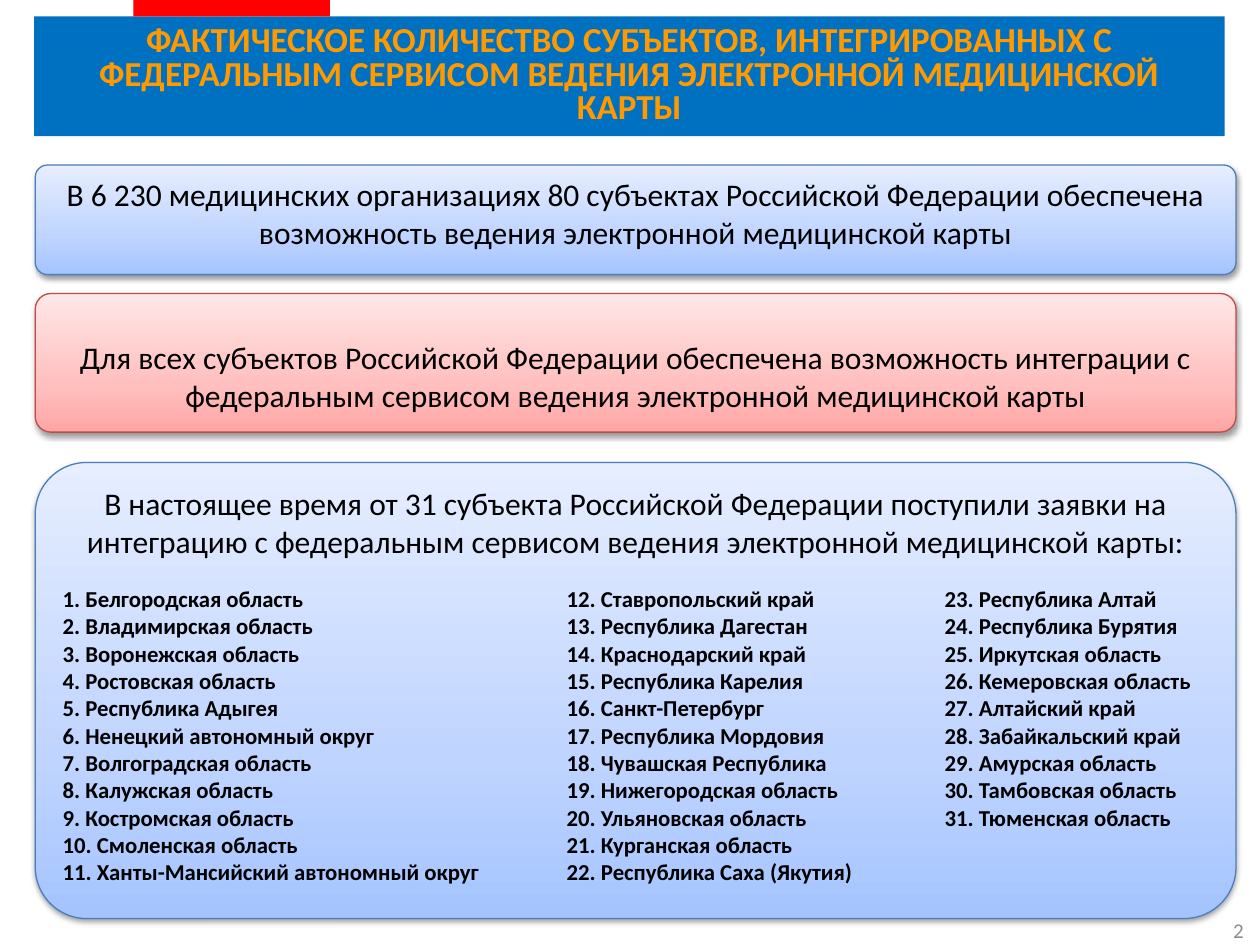
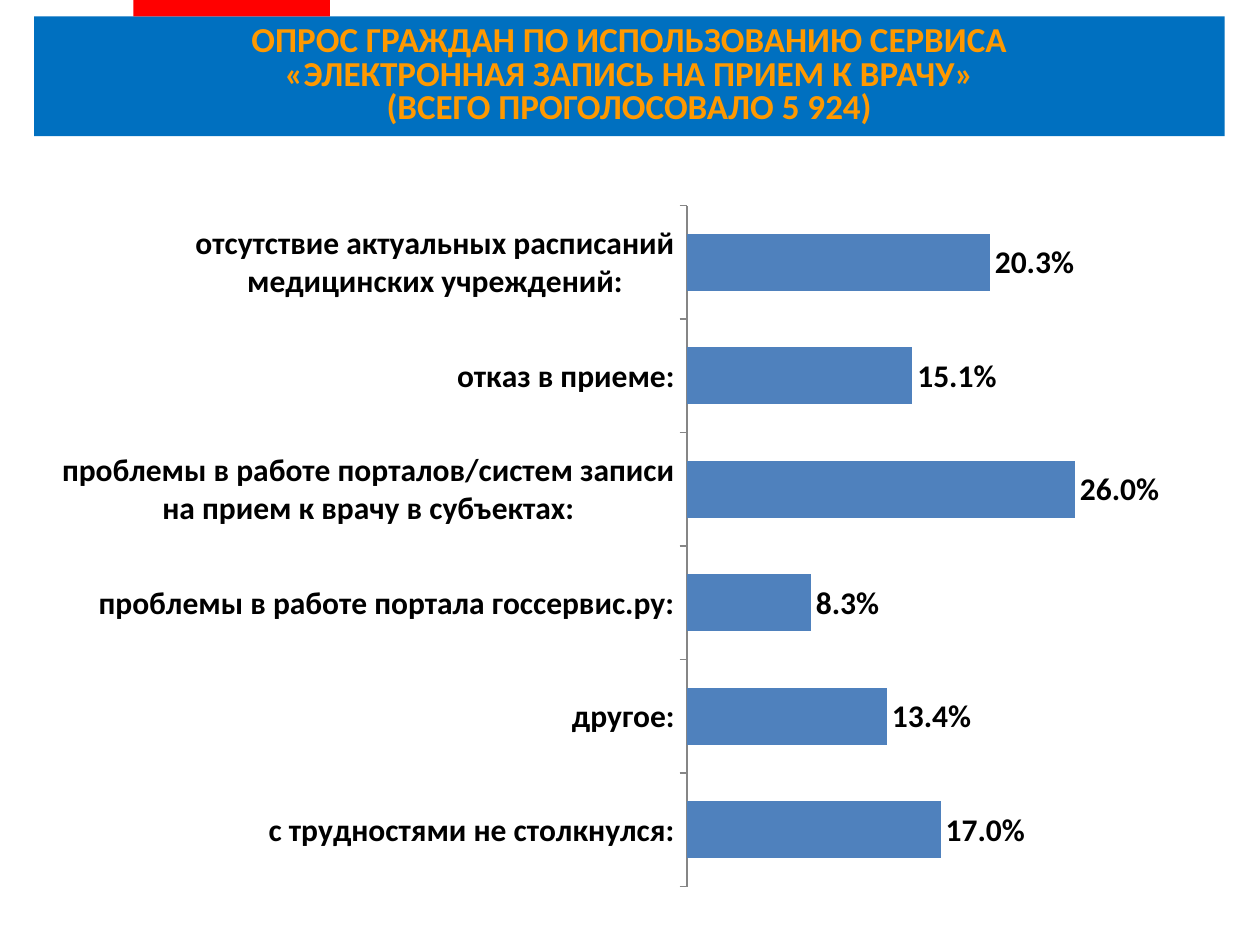
from lxml import etree
from pptx import Presentation
from pptx.chart.data import CategoryChartData
from pptx.dml.color import RGBColor
from pptx.enum.chart import XL_CHART_TYPE, XL_LABEL_POSITION, XL_TICK_MARK
from pptx.enum.shapes import MSO_SHAPE as Shape
from pptx.enum.text import MSO_ANCHOR as Anchor, MSO_AUTO_SIZE as AutoSize, PP_ALIGN as Align
from pptx.oxml import parse_xml
from pptx.oxml.ns import nsdecls, qn
from pptx.util import Inches, Pt

FONT = "Calibri"
BLACK, RED, BAND, ORANGE = "000000", "FF0000", "0070C0", "FF9900"
GREY, BAR, AXIS = "8C8C8C", "4F81BD", "868686"
# Gradient from bottom to top, then the outline
BLUE_PANEL = (("A4C4FF", "BFD4FF", "E6EEFF"), "4B7EBC")
RED_PANEL = (("FFA6A5", "FFC0BF", "FFE7E7"), "BF4C48")
GRADIENT_STOPS = (0, 35, 100)

REGIONS = [
    "Белгородская область", "Владимирская область", "Воронежская область",
    "Ростовская область", "Республика Адыгея", "Ненецкий автономный округ",
    "Волгоградская область", "Калужская область", "Костромская область",
    "Смоленская область", "Ханты-Мансийский автономный округ",
    "Ставропольский край", "Республика Дагестан", "Краснодарский край",
    "Республика Карелия", "Санкт-Петербург", "Республика Мордовия",
    "Чувашская Республика", "Нижегородская область", "Ульяновская область",
    "Курганская область", "Республика Саха (Якутия)", "Республика Алтай",
    "Республика Бурятия", "Иркутская область", "Кемеровская область",
    "Алтайский край", "Забайкальский край", "Амурская область",
    "Тамбовская область", "Тюменская область",
]
REGION_ROWS = 11
COLUMN_TABS = (4, 7)

SURVEY = {
    "отсутствие актуальных расписаний медицинских учреждений:": 0.203,
    "отказ в приеме:": 0.151,
    "проблемы в работе порталов/систем записи на прием к врачу в субъектах:": 0.26,
    "проблемы в работе портала госсервис.ру:": 0.083,
    "другое:": 0.134,
    "с трудностями не столкнулся:": 0.17,
}


def rgb(value):
    return RGBColor.from_string(value)


def inches(box):
    return [Inches(length) for length in box]


def style(font, size, color=BLACK, bold=False):
    font.name, font.size, font.bold = FONT, Pt(size), bold
    font.color.rgb = rgb(color)


def add_header(slide, box, lines):
    """Red tab on the top edge and the title band below it."""
    left, top, width, height = box
    tab = slide.shapes.add_shape(Shape.RECTANGLE, *inches((left + 0.79, 0, 1.56, top)))
    tab.shadow.inherit = False
    tab.fill.solid()
    tab.fill.fore_color.rgb = rgb(RED)
    tab.line.fill.background()

    title = slide.shapes.title
    title.left, title.top, title.width, title.height = inches(box)
    title.fill.solid()
    title.fill.fore_color.rgb = rgb(BAND)
    frame = title.text_frame
    frame.text = "\n".join(lines)
    frame.auto_size, frame.vertical_anchor = AutoSize.NONE, Anchor.MIDDLE
    for line in frame.paragraphs:
        line.alignment, line.line_spacing = Align.CENTER, 0.8
        style(line.font, 20, ORANGE, bold=True)


def add_panel(slide, box, look, message, margin_top=0.05):
    """Rounded gradient panel with a centred message; returns its text frame."""
    colors, outline = look
    panel = slide.shapes.add_shape(Shape.ROUNDED_RECTANGLE, *inches(box))
    panel.adjustments[0] = 0.113
    panel.line.color.rgb, panel.line.width = rgb(outline), Pt(0.75)

    # Three-stop gradient
    panel.fill.gradient()
    panel.fill.gradient_angle = 90
    stops = panel._element.spPr.find(qn("a:gradFill")).find(qn("a:gsLst"))
    for stop in list(stops):
        stops.remove(stop)
    for percent, color in zip(GRADIENT_STOPS, colors):
        stop = etree.SubElement(stops, qn("a:gs"), pos=str(percent * 1000))
        etree.SubElement(stop, qn("a:srgbClr"), val=color)

    # Soft shadow straight below
    panel.shadow.inherit = False
    panel._element.spPr.find(qn("a:effectLst")).append(parse_xml(
        f'<a:outerShdw {nsdecls("a")} blurRad="40000" dist="20000" dir="5400000" '
        f'rotWithShape="0"><a:srgbClr val="{BLACK}"><a:alpha val="38000"/>'
        '</a:srgbClr></a:outerShdw>'))

    frame = panel.text_frame
    frame.word_wrap, frame.vertical_anchor = True, Anchor.TOP
    frame.margin_top = Inches(margin_top)
    frame.text = message
    frame.paragraphs[0].alignment = Align.CENTER
    style(frame.paragraphs[0].font, 18)
    return frame


def add_regions(frame):
    """Numbered regions, filled column by column and aligned by tab stops."""
    numbered = [f"{number}. {region}" for number, region in enumerate(REGIONS, 1)]
    for row in range(REGION_ROWS):
        line = frame.add_paragraph()
        line.text = "\t".join(numbered[row::REGION_ROWS])
        line.alignment = Align.LEFT
        line.space_before = Pt(0 if row else 14.5)
        style(line.font, 13, bold=True)
        tabs = etree.Element(qn("a:tabLst"))
        for position in COLUMN_TABS:
            etree.SubElement(tabs, qn("a:tab"), pos=str(Inches(position)), algn="l")
        line._p.pPr.find(qn("a:defRPr")).addprevious(tabs)


def add_page_number(slide, box, number):
    frame = slide.shapes.add_textbox(*inches(box)).text_frame
    frame.word_wrap, frame.vertical_anchor = True, Anchor.MIDDLE
    frame.text = number
    frame.paragraphs[0].alignment = Align.RIGHT
    style(frame.paragraphs[0].font, 12, GREY)


def add_survey_chart(slide, box):
    """Horizontal bars with the first answer on top."""
    answers = CategoryChartData(number_format="0.0%")
    answers.categories = list(SURVEY)
    answers.add_series("Series 1", list(SURVEY.values()))
    chart = slide.shapes.add_chart(XL_CHART_TYPE.BAR_CLUSTERED, *inches(box), answers).chart
    chart.has_legend = chart.has_title = False
    style(chart.font, 10)

    # Axes
    answer_axis, share_axis = chart.category_axis, chart.value_axis
    answer_axis.reverse_order = True
    answer_axis.major_tick_mark = XL_TICK_MARK.OUTSIDE
    answer_axis.format.line.color.rgb = rgb(AXIS)
    style(answer_axis.tick_labels.font, 18, bold=True)
    share_axis.minimum_scale, share_axis.maximum_scale = 0, 0.3
    share_axis.has_major_gridlines = share_axis.visible = False

    # Bars and their labels
    plot = chart.plots[0]
    plot.gap_width, plot.vary_by_categories = 100, False
    bars = plot.series[0].format.fill
    bars.solid()
    bars.fore_color.rgb = rgb(BAR)
    plot.has_data_labels = True
    labels = plot.data_labels
    labels.show_value, labels.position = True, XL_LABEL_POSITION.OUTSIDE_END
    labels.number_format, labels.number_format_is_linked = "0.0%", False
    style(labels.font, 18, bold=True)

    # Room for the long answers on the left
    area = chart._chartSpace.chart.plotArea
    for layout in area.findall(qn("c:layout")):
        area.remove(layout)
    layout = etree.Element(qn("c:layout"))
    manual = etree.SubElement(layout, qn("c:manualLayout"))
    for tag, value in (("layoutTarget", "inner"), ("xMode", "edge"), ("yMode", "edge"),
                       ("x", 0.577), ("y", 0.02), ("w", 0.4), ("h", 0.96)):
        etree.SubElement(manual, qn(f"c:{tag}"), val=str(value))
    area.insert(0, layout)


def main():
    deck = Presentation()
    deck.slide_width, deck.slide_height = Inches(10), Inches(7.5)
    title_only = deck.slide_layouts[5]
    header_box = (0.27, 0.13, 9.45, 0.95)

    # Slide 1: integrated regions
    integration = deck.slides.add_slide(title_only)
    add_header(integration, header_box, [
        "ФАКТИЧЕСКОЕ КОЛИЧЕСТВО СУБЪЕКТОВ, ИНТЕГРИРОВАННЫХ С "
        "ФЕДЕРАЛЬНЫМ СЕРВИСОМ ВЕДЕНИЯ ЭЛЕКТРОННОЙ МЕДИЦИНСКОЙ КАРТЫ"])
    add_page_number(integration, (7.64, 7.18, 2.33, 0.4), "2")
    add_panel(integration, (0.28, 1.31, 9.53, 0.87), BLUE_PANEL,
              "В 6 230 медицинских организациях 80 субъектах Российской Федерации "
              "обеспечена возможность ведения электронной медицинской карты")
    add_panel(integration, (0.28, 2.33, 9.53, 1.1), RED_PANEL,
              "Для всех субъектов Российской Федерации обеспечена возможность интеграции "
              "с федеральным сервисом ведения электронной медицинской карты", margin_top=0.32)
    applications = add_panel(
        integration, (0.28, 3.67, 9.53, 3.62), BLUE_PANEL,
        "В настоящее время от 31 субъекта Российской Федерации поступили заявки на "
        "интеграцию с федеральным сервисом ведения электронной медицинской карты:")
    add_regions(applications)

    # Slide 2: citizens' survey
    survey = deck.slides.add_slide(title_only)
    add_header(survey, header_box, [
        "ОПРОС ГРАЖДАН ПО ИСПОЛЬЗОВАНИЮ СЕРВИСА",
        "«ЭЛЕКТРОННАЯ ЗАПИСЬ НА ПРИЕМ К ВРАЧУ»",
        "(ВСЕГО ПРОГОЛОСОВАЛО 5 924)"])
    add_survey_chart(survey, (0.33, 1.52, 8.88, 5.63))

    deck.save("out.pptx")


if __name__ == "__main__":
    main()
